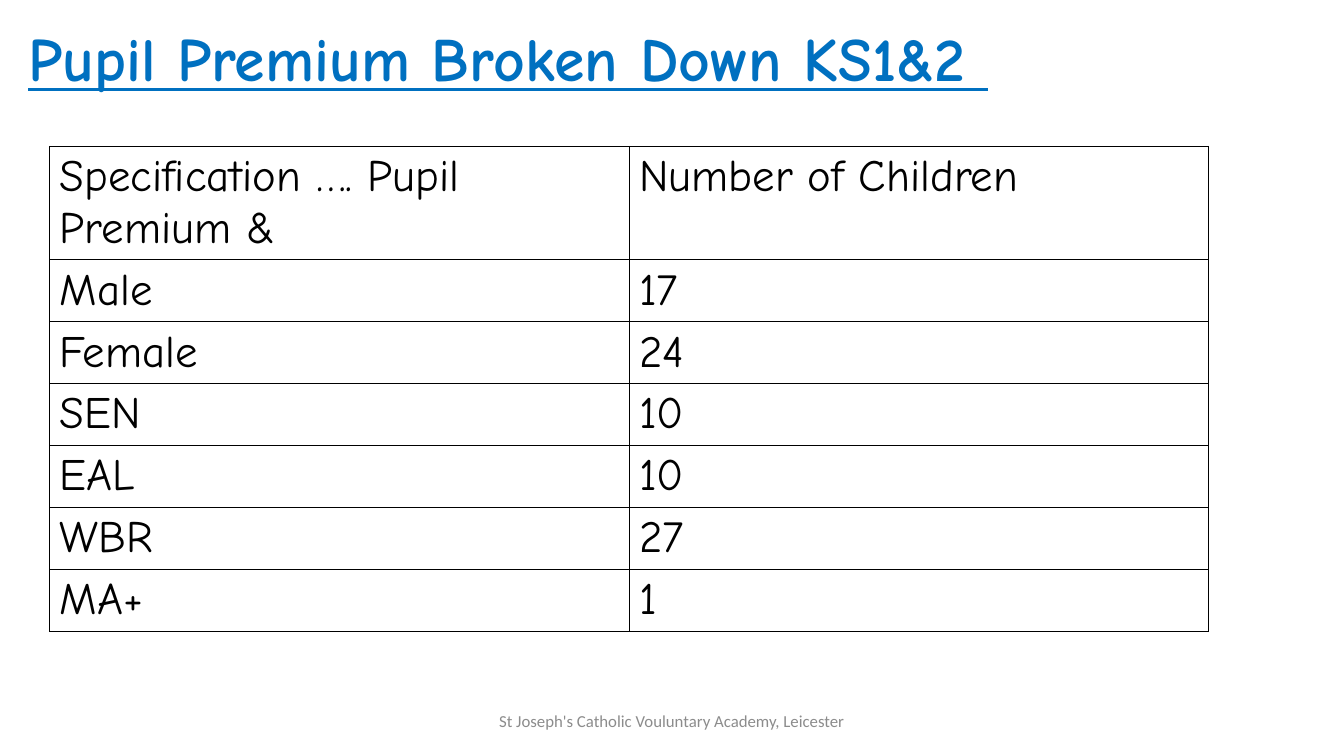
from dataclasses import dataclass

from lxml import etree
from pptx import Presentation
from pptx import util as u
from pptx.dml.color import RGBColor
from pptx.enum import text
from pptx.oxml import ns


@dataclass(frozen=True)
class Theme:
    heading_font: str = "Comic Neue"
    footer_font: str = "Calibri"
    blue: str = "0070C0"
    black: str = "000000"
    grey: str = "8C8C8C"
    title_size: int = 44
    table_size: int = 32
    footer_size: int = 12
    border_width: int = 1


theme = Theme()


def add_run(paragraph, wording, font, size, color):
    run = paragraph.add_run()
    run.text = wording
    run.font.name = font
    run.font.size = u.Pt(size)
    run.font.color.rgb = RGBColor.from_string(color)
    return run


def add_borders(cell):
    properties = cell._tc.get_or_add_tcPr()
    for position, side in enumerate(("lnL", "lnR", "lnT", "lnB")):
        line = etree.Element(ns.qn(f"a:{side}"), w=str(u.Pt(theme.border_width)))
        fill = etree.SubElement(line, ns.qn("a:solidFill"))
        etree.SubElement(fill, ns.qn("a:srgbClr"), val=theme.black)
        properties.insert(position, line)


# Slide
presentation = Presentation()
presentation.slide_width = u.Cm(33.87)
presentation.slide_height = u.Cm(19.05)
slide = presentation.slides.add_slide(presentation.slide_layouts[5])

# Title; the underline runs on under the closing space
title = slide.shapes.title
title.left, title.top = u.Cm(0.46), u.Cm(-0.28)
title.width, title.height = u.Cm(29.21), u.Cm(3.68)
frame = title.text_frame
frame.auto_size = text.MSO_AUTO_SIZE.NONE
frame.vertical_anchor = text.MSO_ANCHOR.MIDDLE
paragraph = frame.paragraphs[0]
paragraph.alignment = text.PP_ALIGN.LEFT
paragraph.line_spacing = 0.9
run = add_run(paragraph, "Pupil Premium Broken Down KS1&2 ",
              theme.heading_font, theme.title_size, theme.blue)
run.font.bold = True
run.font.underline = True

# Table of pupil groups
pupil_rows = [
    ("Specification …. Pupil Premium &", "Number of Children"),
    ("Male", "17"),
    ("Female", "24"),
    ("SEN", "10"),
    ("EAL", "10"),
    ("WBR", "27"),
    ("MA+", "1"),
]
header_height, row_height = u.Cm(2.84), u.Cm(1.56)
table = slide.shapes.add_table(
    len(pupil_rows), 2, u.Cm(1.25), u.Cm(3.69), u.Cm(29.21),
    header_height + row_height * (len(pupil_rows) - 1)).table
table.first_row = False
table.horz_banding = False

for row_index, values in enumerate(pupil_rows):
    table.rows[row_index].height = row_height if row_index else header_height
    for column_index, value in enumerate(values):
        cell = table.cell(row_index, column_index)
        cell.fill.background()
        add_borders(cell)
        add_run(cell.text_frame.paragraphs[0], value,
                theme.heading_font, theme.table_size, theme.black)

# Footer
footer = slide.shapes.add_textbox(u.Cm(11.22), u.Cm(17.66), u.Cm(11.43), u.Cm(1.01))
frame = footer.text_frame
frame.word_wrap = True
frame.vertical_anchor = text.MSO_ANCHOR.MIDDLE
paragraph = frame.paragraphs[0]
paragraph.alignment = text.PP_ALIGN.CENTER
add_run(paragraph, "St Joseph's Catholic Vouluntary Academy, Leicester",
        theme.footer_font, theme.footer_size, theme.grey)

presentation.save("out.pptx")
